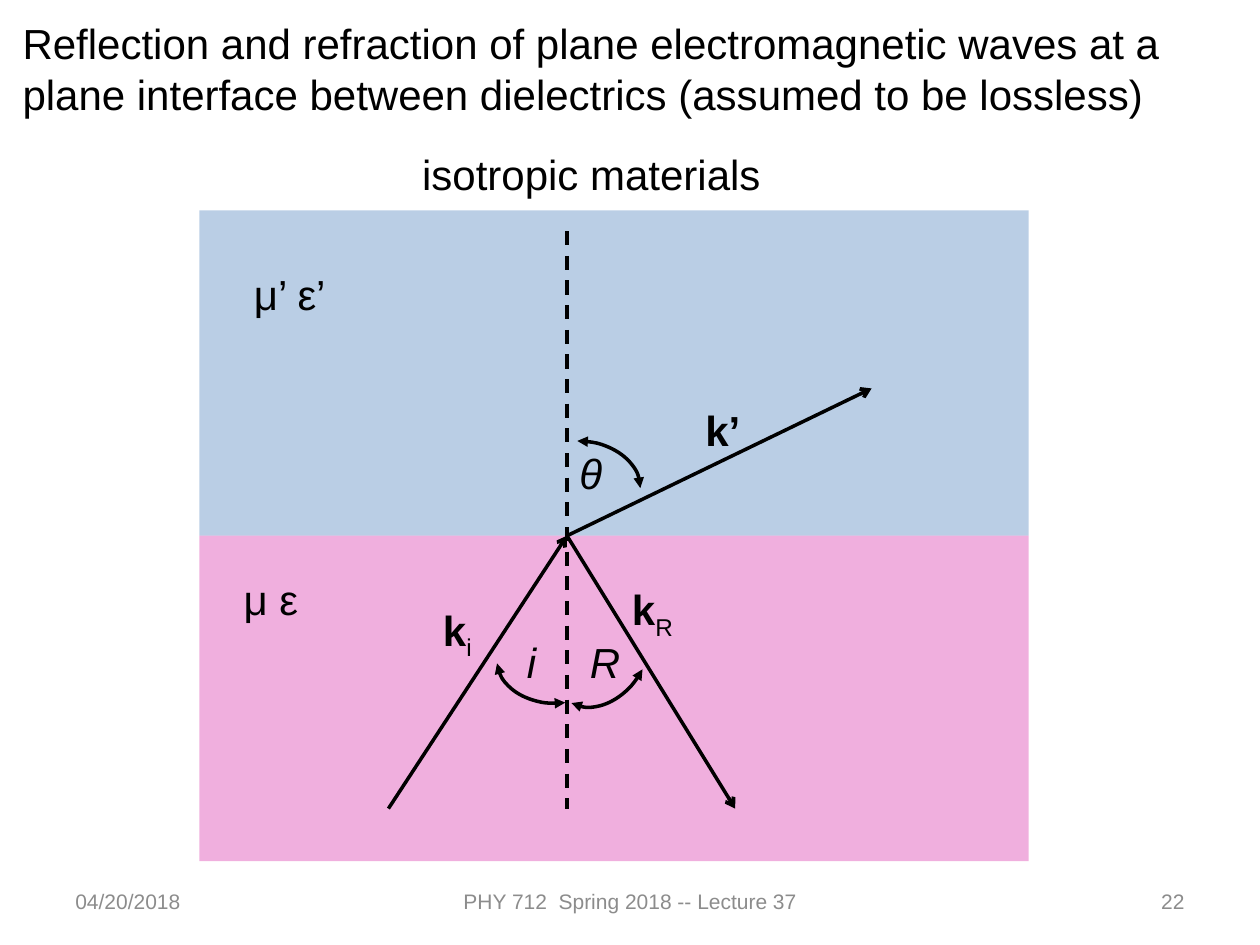
from dataclasses import dataclass

from lxml import etree
from pptx import Presentation
from pptx.dml.color import RGBColor
from pptx.enum.dml import MSO_LINE
from pptx.enum.shapes import MSO_CONNECTOR, MSO_SHAPE
from pptx.enum.text import MSO_ANCHOR, MSO_AUTO_SIZE, PP_ALIGN
from pptx.oxml.ns import qn
from pptx.util import Cm, Pt

LEFT, CENTER, RIGHT = PP_ALIGN.LEFT, PP_ALIGN.CENTER, PP_ALIGN.RIGHT
TOP, MIDDLE = MSO_ANCHOR.TOP, MSO_ANCHOR.MIDDLE
DASH = MSO_LINE.DASH
STRAIGHT = MSO_CONNECTOR.STRAIGHT
RECT, ARC = MSO_SHAPE.RECTANGLE, MSO_SHAPE.ARC
TITLE_ONLY = 5


@dataclass(frozen=True)
class Theme:
    font: str = "Arial"
    ink: str = "000000"
    muted: str = "8C8C8C"
    upper: str = "4F81BD"
    lower: str = "DA32AA"
    opacity: int = 39
    body: int = 24
    footer: int = 12
    line: int = 2


THEME = Theme()


def rgb(value):
    return RGBColor.from_string(value)


def cms(*values):
    return [Cm(v) for v in values]


def add_run(p, text, size=THEME.body, color=THEME.ink, bold=False, italic=False, sub=False):
    r = p.add_run()
    r.text = text
    r.font.name = THEME.font
    r.font.size = Pt(size)
    r.font.color.rgb = rgb(color)
    r.font.bold = bold
    r.font.italic = italic
    if sub:
        r.font._element.set("baseline", "-25000")


def write(sp, text, sub="", align=LEFT, anchor=TOP, **fmt):
    tf = sp.text_frame
    tf.word_wrap = True
    tf.auto_size = MSO_AUTO_SIZE.NONE
    tf.vertical_anchor = anchor
    p = tf.paragraphs[0]
    p.alignment = align
    add_run(p, text, **fmt)
    if sub:
        add_run(p, sub, sub=True)


def add_text(shapes, box, text, **fmt):
    write(shapes.add_textbox(*cms(*box)), text, **fmt)


def add_title(s, box, text):
    sp = s.shapes.title
    sp.left, sp.top, sp.width, sp.height = cms(*box)
    write(sp, text)


def add_medium(shapes, box, color):
    sp = shapes.add_shape(RECT, *cms(*box))
    sp.shadow.inherit = False
    sp.fill.solid()
    sp.fill.fore_color.rgb = rgb(color)
    clr = sp._element.spPr.find(".//" + qn("a:srgbClr"))
    etree.SubElement(clr, qn("a:alpha")).set("val", str(THEME.opacity * 1000))
    sp.line.fill.background()


def style_line(sp, head=None, tail=None, dash=None):
    sp.line.color.rgb = rgb(THEME.ink)
    sp.line.width = Pt(THEME.line)
    if dash:
        sp.line.dash_style = dash
    ln = sp._element.spPr.find(qn("a:ln"))
    for tag, kind in (("a:headEnd", head), ("a:tailEnd", tail)):
        if kind:
            etree.SubElement(ln, qn(tag)).set("type", kind)


def add_line(shapes, start, end, **fmt):
    cx = shapes.add_connector(STRAIGHT, *cms(*start, *end))
    style_line(cx, **fmt)
    etree.SubElement(cx._element.spPr, qn("a:effectLst"))


def add_angle(shapes, left, top, rotation):
    sp = shapes.add_shape(ARC, *cms(left, top, 2.54, 1.9))
    sp.rotation = rotation
    sp.fill.background()
    style_line(sp, head="triangle", tail="triangle")
    sp.shadow.inherit = False


def add_footer(s):
    for left, width, text, align in (
        (1.27, 5.93, "04/20/2018", LEFT),
        (8.68, 8.05, "PHY 712  Spring 2018 -- Lecture 37", CENTER),
        (18.2, 5.93, "22", RIGHT),
    ):
        add_text(s.shapes, (left, 17.65, width, 1.02), text, align=align,
                 anchor=MIDDLE, size=THEME.footer, color=THEME.muted)


def add_diagram(s):
    shapes = s.shapes.add_group_shape().shapes
    left, top, width, depth = 4.02, 4.24, 16.72, 6.56
    interface, bottom = top + depth, 16.3
    origin = (11.43, interface)

    add_medium(shapes, (left, top, width, depth), THEME.upper)
    add_medium(shapes, (left, interface, width, depth), THEME.lower)

    add_line(shapes, (7.83, bottom), origin, tail="arrow")
    add_line(shapes, origin, (14.82, bottom), tail="arrow")
    add_line(shapes, (origin[0], 4.66), (origin[0], bottom), dash=DASH)
    add_line(shapes, origin, (17.57, 7.83), tail="arrow")

    for x, y, w, text, fmt in (
        (4.87, 5.29, 3.6, "μ’ ε’", {}),
        (4.66, 11.43, 3.6, "μ ε", {}),
        (13.97, 8.02, 2.12, "k’", {"bold": True}),
        (8.68, 12.06, 2.12, "k", {"bold": True, "sub": "i"}),
        (12.49, 11.64, 2.12, "k", {"bold": True, "sub": "R"}),
        (10.37, 12.7, 1.06, "i", {"italic": True}),
        (11.64, 12.7, 1.06, "R", {"italic": True}),
        (11.43, 8.89, 1.06, "θ", {"italic": True}),
    ):
        add_text(shapes, (x, y, w, 1.28), text, **fmt)

    for x, y, rotation in ((10.37, 8.89, 0), (10.01, 12.27, 173.1), (10.84, 12.1, 117.8)):
        add_angle(shapes, x, y, rotation)


def main():
    prs = Presentation()
    prs.slide_width, prs.slide_height = cms(25.4, 19.05)
    s = prs.slides.add_slide(prs.slide_layouts[TITLE_ONLY])
    add_footer(s)
    add_title(s, (0.2, 0.23, 23.93, 2.31),
              "Reflection and refraction of plane electromagnetic waves at a "
              "plane interface between dielectrics (assumed to be lossless)")
    add_diagram(s)
    add_text(s.shapes, (8.26, 2.86, 8.26, 1.28), "isotropic materials")
    prs.save("out.pptx")


if __name__ == "__main__":
    main()
